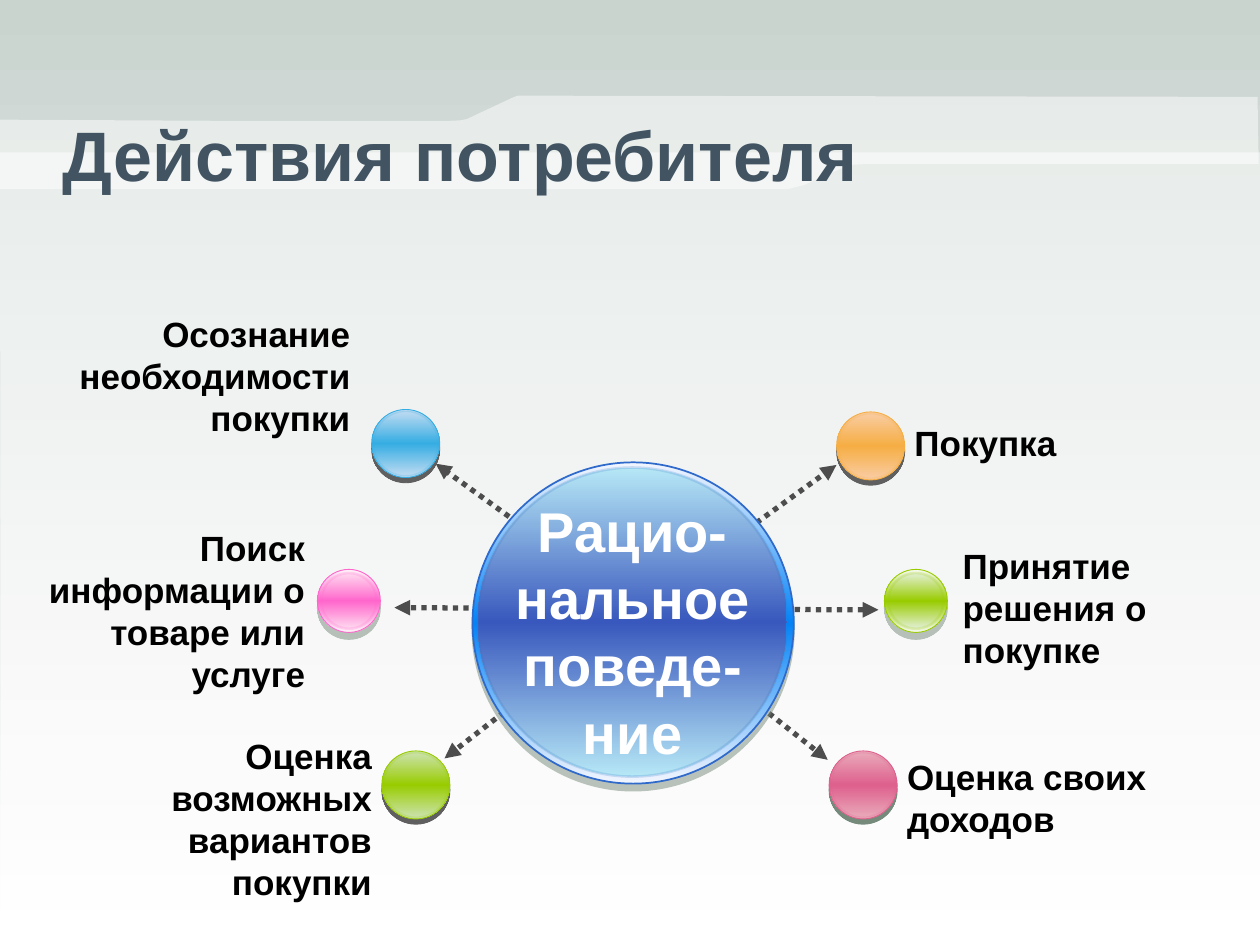
from copy import deepcopy

from pptx import Presentation
from pptx.dml.color import RGBColor
from pptx.enum.dml import MSO_LINE
from pptx.enum.shapes import MSO_CONNECTOR, MSO_SHAPE
from pptx.enum.text import MSO_ANCHOR, PP_ALIGN
from pptx.oxml import parse_xml
from pptx.oxml.ns import nsdecls, qn
from pptx.util import Pt

WHITE = RGBColor(0xFF, 0xFF, 0xFF)
BLACK = RGBColor(0, 0, 0)
MIST = RGBColor(0xCA, 0xD4, 0xCF)
SLATE = RGBColor(0x42, 0x54, 0x62)
GRAY = RGBColor(0x4D, 0x4D, 0x4D)
DARK_SHADE = RGBColor(0x5F, 0x5F, 0x5F)
SOFT_SHADE = RGBColor(0x76, 0x8A, 0x7B)
RIM_PALE = RGBColor(0xF3, 0xF6, 0xFE)
RIM_BLUE = RGBColor(0x03, 0x83, 0xF7)
RIM_LINE = RGBColor(0x2F, 0x6A, 0xCB)
HUB_PALE = RGBColor(0xB6, 0xE7, 0xF6)
HUB_BLUE = RGBColor(0x39, 0x58, 0xBD)
HUB_LINE = RGBColor(0x33, 0x76, 0xC7)
PINK = RGBColor(0xFF, 0x66, 0xCC)
PINK_EDGE = RGBColor(0xFF, 0xF5, 0xFA)
PINK_PALE = RGBColor(0xFF, 0xD9, 0xEF)
LIME = RGBColor(0x99, 0xCC, 0x00)
LIME_EDGE = RGBColor(0xF7, 0xFA, 0xF3)
LIME_PALE = RGBColor(0xE2, 0xEF, 0xD4)
LIME_SOFT = RGBColor(0xCA, 0xE2, 0xAA)
ROSE = RGBColor(0xDE, 0x60, 0x8D)
ROSE_SOFT = RGBColor(0xE9, 0xA7, 0xB9)
ORANGE = RGBColor(0xF6, 0xAE, 0x44)
ORANGE_SOFT = RGBColor(0xF9, 0xCB, 0x9F)
SKY = RGBColor(0x35, 0xAD, 0xE3)
SKY_SOFT = RGBColor(0xBD, 0xDA, 0xF1)

HUB = (270, 264.2, 183.6)
HUB_CENTER = (364, 348)

LEFT, RIGHT = PP_ALIGN.LEFT, PP_ALIGN.RIGHT
LARGE_BALL, SMALL_BALL = (38.9, 1.1, 3), (36, 2.1, 4)
STEPS = [
    ("Осознание необходимости покупки", (23, 175, 184.3, 80), RIGHT, (249, 265),
     (212.4, 234), LARGE_BALL, (SKY_SOFT, SKY_SOFT, SKY), (DARK_SHADE, 100)),
    ("Поиск информации о товаре или услуге", (14.4, 297.4, 167, 104.4), RIGHT, (225.4, 347.2),
     (181.4, 325.4), SMALL_BALL, (PINK_EDGE, PINK_PALE, PINK), (SOFT_SHADE, 50)),
    ("Оценка возможных вариантов покупки", (87.8, 416.2, 131.8, 104.4), RIGHT, (254, 433.4),
     (218.2, 429.1), LARGE_BALL, (LIME_SOFT, LIME_SOFT, LIME), (DARK_SHADE, 100)),
    ("Оценка своих доходов", (511.2, 428.4, 154, 55.4), LEFT, (473, 434.2),
     (473.8, 429.1), LARGE_BALL, (ROSE_SOFT, ROSE_SOFT, ROSE), (SOFT_SHADE, 100)),
    ("Принятие решения о покупке", (543, 307.4, 126.7, 80), LEFT, (502, 348.5),
     (505.4, 325.4), SMALL_BALL, (LIME_EDGE, LIME_PALE, LIME), (SOFT_SHADE, 50)),
    ("Покупка", (515.5, 237.6, 103, 31.7), LEFT, (478, 265.7),
     (478.1, 235.4), LARGE_BALL, (ORANGE_SOFT, ORANGE_SOFT, ORANGE), (DARK_SHADE, 100)),
]


def add_alpha(element, percent):
    color = element.find(".//" + qn("a:srgbClr"))
    color.append(parse_xml(f'<a:alpha {nsdecls("a")} val="{percent * 1000}"/>'))


def add_text(s, box, text, size, color, align=LEFT, anchor=MSO_ANCHOR.TOP):
    tf = s.shapes.add_textbox(*map(Pt, box)).text_frame
    tf.word_wrap = True
    tf.vertical_anchor = anchor
    p = tf.paragraphs[0]
    p.text = text
    p.alignment = align
    font = p.runs[0].font
    font.name, font.size, font.bold = "Arial", Pt(size), True
    font.color.rgb = color


def add_disc(s, box, edge, middle, line, width, line_alpha=100, shadow=None):
    sp = s.shapes.add_shape(MSO_SHAPE.OVAL, *map(Pt, box))
    sp.fill.gradient()
    sp.fill.gradient_angle = 270
    first, second = sp.fill.gradient_stops
    first.color.rgb, second.color.rgb = edge, middle
    second.position = 0.5
    stops = sp.element.spPr.find(".//" + qn("a:gsLst"))
    last = deepcopy(stops[0])
    last.set("pos", "100000")
    stops.append(last)
    sp.line.color.rgb = line
    sp.line.width = Pt(width)
    if line_alpha < 100:
        add_alpha(sp.element.spPr.find(qn("a:ln")), line_alpha)
    sp.shadow.inherit = False
    if shadow:
        color, alpha, distance = shadow
        sp.element.spPr.find(qn("a:effectLst")).append(parse_xml(
            f'<a:outerShdw {nsdecls("a")} dist="{Pt(distance)}" dir="5400000" algn="ctr" '
            f'rotWithShape="0"><a:srgbClr val="{color}"><a:alpha val="{alpha * 1000}"/>'
            '</a:srgbClr></a:outerShdw>'))


def add_arrow(s, start, end):
    line = s.shapes.add_connector(MSO_CONNECTOR.STRAIGHT, *map(Pt, start + end))
    line.line.color.rgb = GRAY
    line.line.width = Pt(3)
    line.line.dash_style = MSO_LINE.ROUND_DOT
    spPr = line.element.spPr
    spPr.find(qn("a:ln")).append(parse_xml(f'<a:tailEnd {nsdecls("a")} type="triangle"/>'))
    spPr.append(parse_xml(f'<a:effectLst {nsdecls("a")}/>'))


def add_veil(s, points):
    start, *rest = [(Pt(x), Pt(y)) for x, y in points]
    builder = s.shapes.build_freeform(*start)
    builder.add_line_segments(rest, close=True)
    sp = builder.convert_to_shape()
    sp.fill.solid()
    sp.fill.fore_color.rgb = WHITE
    add_alpha(sp.element.spPr.find(qn("a:solidFill")), 50)
    sp.line.fill.background()
    sp.shadow.inherit = False


def add_backdrop(s):
    fill = s.background.fill
    fill.gradient()
    fill.gradient_angle = 270
    for stop, color, position in zip(fill.gradient_stops, (MIST, WHITE), (0, 1)):
        stop.color.rgb, stop.position = color, position
    add_veil(s, [(0.7, 539.3), (722.2, 540), (720, 87.1), (0, 87.1)])
    add_veil(s, [(718.6, 55.4), (306.7, 54.7), (296, 54.7), (293.8, 55.4), (272.2, 65.5),
                 (267, 68), (263, 68.8), (256.3, 69.1), (130, 69.1), (0, 68.4), (0, 108),
                 (450.7, 108), (459.4, 105.8), (485.3, 94.3), (498.2, 93.6), (719.3, 93.6)])


def add_step(s, text, box, align, tip, corner, ball, colors, shade):
    size, inset, drop = ball
    edge, pale, middle = colors
    x, y = corner
    inner = size - 2 * inset
    add_text(s, box, text, 20, BLACK, align)
    add_arrow(s, HUB_CENTER, tip)
    add_disc(s, (x, y, size, size), edge, middle, middle, 0.5, shadow=shade + (drop,))
    add_disc(s, (x + inset, y + inset, inner, inner), pale, middle, middle,
             1.5 if ball is SMALL_BALL else 0.75, 20)


def add_hub(s, x, y, size):
    add_disc(s, (x, y, size, size), RIM_PALE, RIM_BLUE, RIM_LINE, 1,
             shadow=(SOFT_SHADE, 50, 4))
    add_disc(s, (x + 3, y + 3, size - 7, size - 7), HUB_PALE, HUB_BLUE, HUB_LINE, 1.5, 20)
    add_text(s, (x - 1.4, y + 16, size + 2.2, 162.7), "Рацио-нальное поведе-ние", 32, WHITE,
             PP_ALIGN.CENTER)


def main():
    prs = Presentation()
    prs.slide_width, prs.slide_height = Pt(720), Pt(540)
    s = prs.slides.add_slide(prs.slide_layouts[6])
    add_backdrop(s)
    add_text(s, (28.8, 61.2, 661.7, 53.3), "Действия потребителя", 40, SLATE,
             anchor=MSO_ANCHOR.MIDDLE)
    for step in STEPS:
        add_step(s, *step)
    add_hub(s, *HUB)
    prs.save("out.pptx")


if __name__ == "__main__":
    main()
